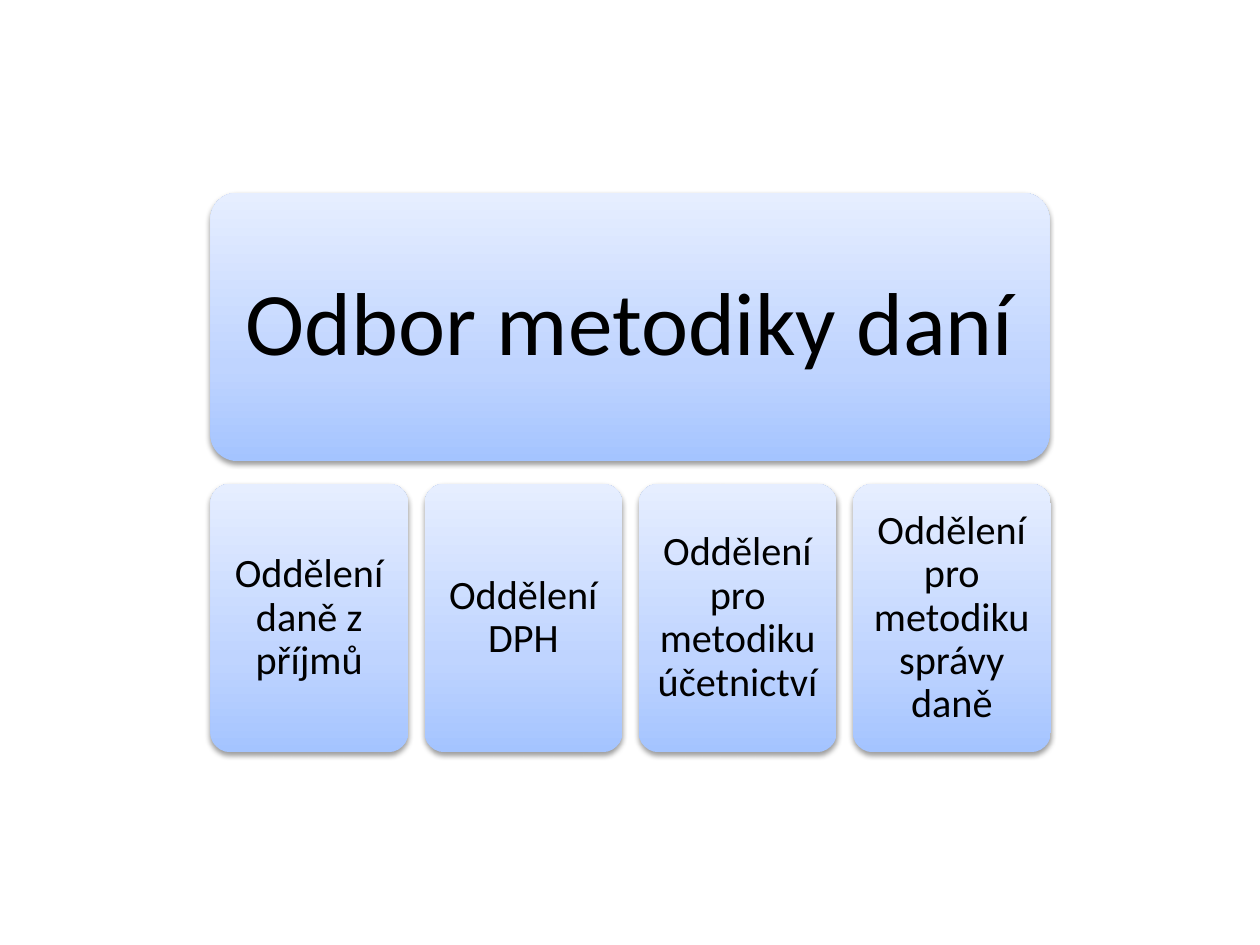
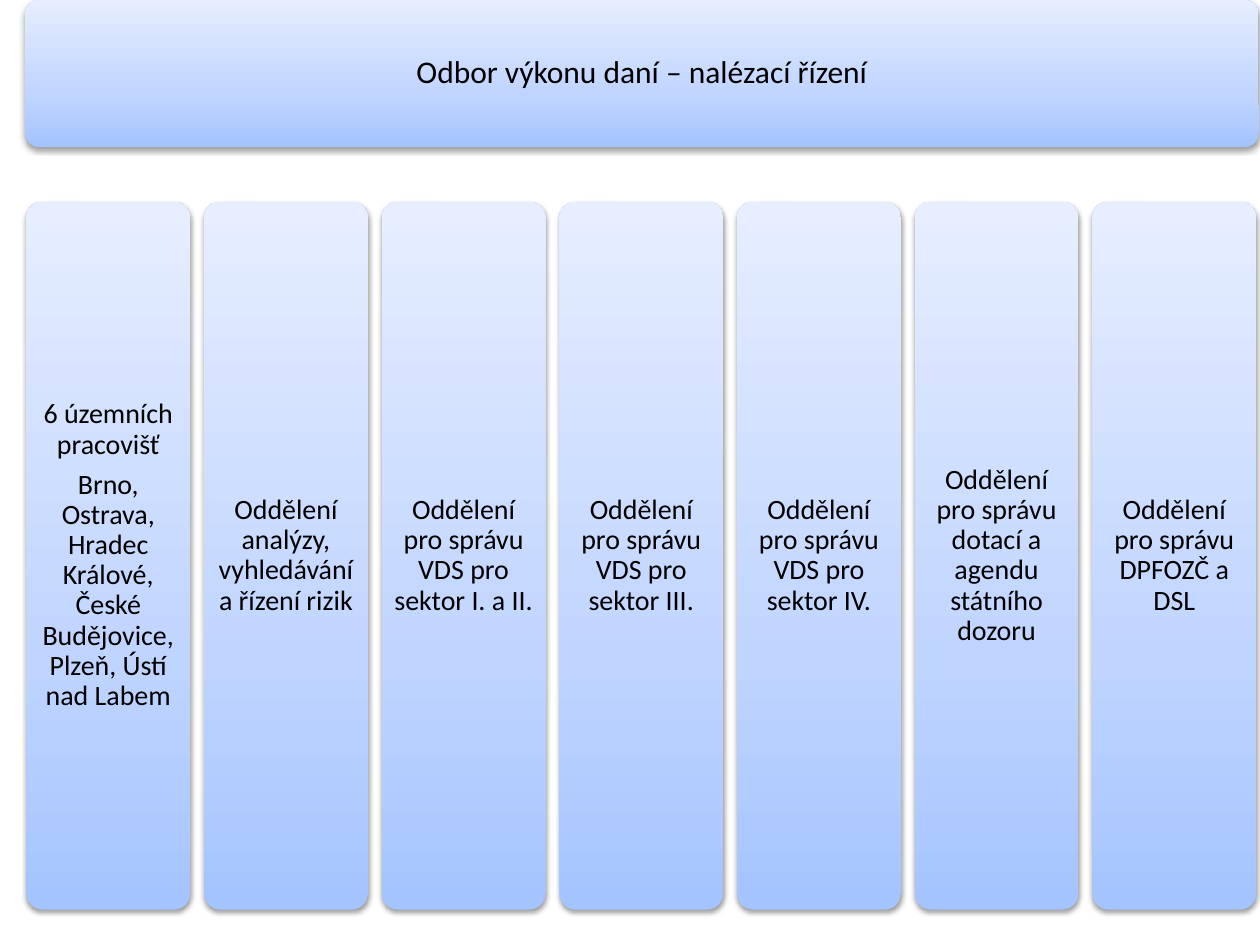
import copy

import pptx
import pptx.dml.color
import pptx.enum.shapes
import pptx.enum.text
import pptx.oxml
import pptx.oxml.ns
import pptx.util

Inches = pptx.util.Inches
Pt = pptx.util.Pt
RGBColor = pptx.dml.color.RGBColor
qn = pptx.oxml.ns.qn

BLACK = RGBColor(0x00, 0x00, 0x00)
DEEP = RGBColor(0xA4, 0xC4, 0xFF)
MID = RGBColor(0xBF, 0xD4, 0xFF)
PALE = RGBColor(0xE6, 0xEE, 0xFF)
STOPS = [(0, DEEP), (0.35, MID), (1, PALE)]

ROUND = 0.1
SHADOW = (
    '<a:outerShdw xmlns:a="http://schemas.openxmlformats.org/drawingml/2006/main" '
    f'blurRad="{Pt(3.1)}" dist="{Pt(1.6)}" dir="5400000" rotWithShape="0">'
    f'<a:srgbClr val="{BLACK}"><a:alpha val="38000"/></a:srgbClr></a:outerShdw>'
)


def paint(shape):
    """Give the shape the shared gradient, no outline and a soft shadow."""
    shape.fill.gradient()
    shape.fill.gradient_angle = 90
    props = shape.element.spPr
    stops = props.find(".//" + qn("a:gsLst"))
    stops.append(copy.deepcopy(stops[0]))
    for stop, (place, color) in zip(shape.fill.gradient_stops, STOPS):
        stop.position = place
        stop.color.rgb = color
    shape.line.fill.background()
    shape.shadow.inherit = False
    props.find(qn("a:effectLst")).append(pptx.oxml.parse_xml(SHADOW))


def box(slide, left, top, width, height, lines, size, inset):
    shape = slide.shapes.add_shape(
        pptx.enum.shapes.MSO_SHAPE.ROUNDED_RECTANGLE,
        Inches(left), Inches(top), Inches(width), Inches(height))
    shape.adjustments[0] = ROUND
    paint(shape)

    # The rounded corners already push the text inwards by this much.
    corner = 0.29 * ROUND * min(width, height)
    margin = Inches(inset - corner)
    frame = shape.text_frame
    frame.text = lines
    look = {
        "word_wrap": True,
        "vertical_anchor": pptx.enum.text.MSO_ANCHOR.MIDDLE,
        "margin_left": margin, "margin_right": margin,
        "margin_top": margin, "margin_bottom": margin,
    }
    for name, value in look.items():
        setattr(frame, name, value)

    style = {
        "alignment": pptx.enum.text.PP_ALIGN.CENTER,
        "line_spacing": 0.9,
        "space_after": Pt(0.35 * size),
    }
    for para in frame.paragraphs:
        for name, value in style.items():
            setattr(para, name, value)
        for name, value in {"name": "Calibri", "size": Pt(size)}.items():
            setattr(para.runs[0].font, name, value)
        para.runs[0].font.color.rgb = BLACK


# Each chart: head is (text, place, size, inset); row is (left, top, width,
# height, step, size, inset); units are the boxes below the head.
CHARTS = [
    {
        "head": ("Odbor metodiky daní", (1.67, 1.53, 6.66, 2.13), 51, 0.21),
        "row": (1.67, 3.84, 1.57, 2.13, 1.7, 23, 0.1),
        "units": [
            "Oddělení daně z příjmů",
            "Oddělení DPH",
            "Oddělení pro metodiku účetnictví",
            "Oddělení pro metodiku správy daně",
        ],
    },
    {
        "head": ("Odbor výkonu daní – nalézací řízení", (0.2, 0, 9.79, 1.17), 18, 0.07),
        "row": (0.21, 1.6, 1.3, 5.62, 1.41, 16, 0.07),
        "units": [
            "6 územních pracovišť\n"
            "Brno, Ostrava, Hradec Králové, České Budějovice, Plzeň, Ústí nad Labem",
            "Oddělení analýzy, vyhledávání a řízení rizik",
            "Oddělení pro správu VDS pro sektor I. a II.",
            "Oddělení pro správu VDS pro sektor III.",
            "Oddělení pro správu VDS pro sektor IV.",
            "Oddělení pro správu dotací a agendu státního dozoru",
            "Oddělení pro správu DPFOZČ a DSL",
        ],
    },
]

deck = pptx.Presentation()
deck.slide_width = Inches(10)
deck.slide_height = Inches(7.5)

for chart in CHARTS:
    slide = deck.slides.add_slide(deck.slide_layouts[6])
    text, place, size, inset = chart["head"]
    box(slide, *place, text, size, inset)
    left, top, width, height, step, size, inset = chart["row"]
    for i, unit in enumerate(chart["units"]):
        box(slide, left + i * step, top, width, height, unit, size, inset)

deck.save("out.pptx")
